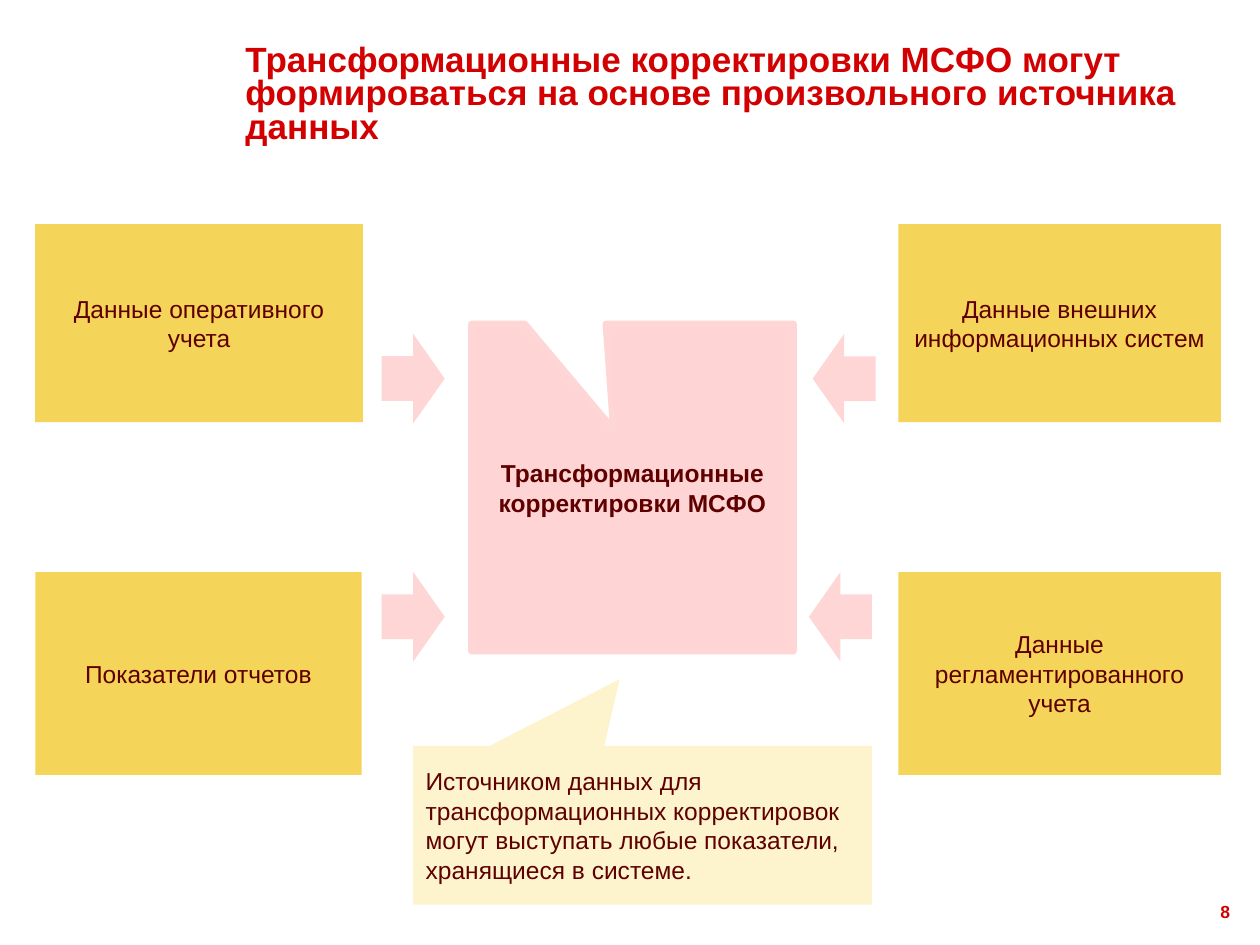
from dataclasses import dataclass

from pptx import Presentation
from pptx.dml.color import RGBColor
from pptx.enum.shapes import MSO_SHAPE
from pptx.enum.text import MSO_ANCHOR, PP_ALIGN
from pptx.shapes.autoshape import Shape
from pptx.slide import Slide
from pptx.util import Emu, Pt

EMU_PER_PX = 9144


@dataclass(frozen=True)
class Theme:
    font: str = "Arial"
    accent: str = "D20000"
    ink: str = "5F0000"
    source: str = "F4D459"
    note: str = "FDF4CD"
    center: str = "FFD4D4"
    arrow: str = "FFD6D6"
    title_size: int = 20
    body_size: int = 14
    number_size: int = 10
    outline: float = 3.5


@dataclass(frozen=True)
class Area:
    left: int
    top: int
    width: int
    height: int

    def lengths(self) -> tuple[Emu, ...]:
        return tuple(Emu(value * EMU_PER_PX) for value in
                     (self.left, self.top, self.width, self.height))


@dataclass(frozen=True)
class Label:
    text: str
    size: int
    color: str
    bold: bool = False
    align: PP_ALIGN = PP_ALIGN.CENTER
    anchor: MSO_ANCHOR = MSO_ANCHOR.MIDDLE
    line_spacing: float = 1.0


@dataclass(frozen=True)
class Block:
    area: Area
    kind: MSO_SHAPE
    fill: str
    label: Label | None = None
    adjustments: tuple[float, ...] = ()
    outline: str | None = None
    rotation: int = 0


THEME = Theme()


def write_label(box: Shape, label: Label) -> None:
    frame = box.text_frame
    frame.word_wrap = True
    frame.vertical_anchor = label.anchor
    para = frame.paragraphs[0]
    para.alignment = label.align
    para.line_spacing = label.line_spacing
    span = para.add_run()
    span.text = label.text
    span.font.name = THEME.font
    span.font.size = Pt(label.size)
    span.font.bold = label.bold
    span.font.color.rgb = RGBColor.from_string(label.color)


def draw_text(page: Slide, area: Area, label: Label) -> None:
    write_label(page.shapes.add_textbox(*area.lengths()), label)


def draw_block(page: Slide, block: Block) -> None:
    shape = page.shapes.add_shape(block.kind, *block.area.lengths())
    shape.shadow.inherit = False
    shape.rotation = block.rotation
    for index, value in enumerate(block.adjustments):
        shape.adjustments[index] = value
    shape.fill.solid()
    shape.fill.fore_color.rgb = RGBColor.from_string(block.fill)
    if block.outline:
        shape.line.color.rgb = RGBColor.from_string(block.outline)
        shape.line.width = Pt(THEME.outline)
    else:
        shape.line.fill.background()
    if block.label:
        write_label(shape, block.label)


def source_block(area: Area, text: str) -> Block:
    return Block(area, MSO_SHAPE.SNIP_2_DIAG_RECTANGLE, THEME.source,
                 Label(text, THEME.body_size, THEME.ink), (0, 0))


def arrow_block(left: int, top: int, rotation: int) -> Block:
    return Block(Area(left, top, 50, 71), MSO_SHAPE.RIGHT_ARROW,
                 THEME.arrow, rotation=rotation)


TITLE = Label(
    "Трансформационные корректировки МСФО могут формироваться на основе "
    "произвольного источника данных",
    THEME.title_size, THEME.accent, bold=True, align=PP_ALIGN.LEFT,
    line_spacing=0.8)
PAGE_NUMBER = Label("8", THEME.number_size, THEME.accent, bold=True,
                    align=PP_ALIGN.RIGHT, anchor=MSO_ANCHOR.TOP)
NOTE = Label(
    "Источником данных для трансформационных корректировок могут выступать "
    "любые показатели, хранящиеся в системе.",
    THEME.body_size, THEME.ink, align=PP_ALIGN.LEFT)
CENTER = Label("Трансформационные корректировки МСФО",
               THEME.body_size, THEME.ink, bold=True)

BLOCKS = (
    source_block(Area(28, 178, 260, 157), "Данные оперативного учета"),
    Block(Area(328, 592, 364, 126), MSO_SHAPE.RECTANGULAR_CALLOUT,
          THEME.note, NOTE, (-0.05, -0.92)),
    Block(Area(374, 257, 256, 260), MSO_SHAPE.RECTANGULAR_CALLOUT,
          THEME.center, CENTER, (-0.06, -0.18), outline=THEME.arrow),
    source_block(Area(713, 178, 256, 157),
                 "Данные внешних информационных систем"),
    source_block(Area(713, 454, 256, 161),
                 "Данные регламентированного учета"),
    source_block(Area(28, 454, 259, 161), "Показатели отчетов"),
    arrow_block(303, 454, 0),
    arrow_block(303, 265, 0),
    arrow_block(642, 454, 180),
    arrow_block(645, 265, 180),
)


def main() -> None:
    deck = Presentation()
    deck.slide_width = Emu(1000 * EMU_PER_PX)
    deck.slide_height = Emu(750 * EMU_PER_PX)
    page = deck.slides.add_slide(deck.slide_layouts[6])
    draw_text(page, Area(185, 17, 783, 118), TITLE)
    draw_text(page, Area(902, 710, 84, 28), PAGE_NUMBER)
    for block in BLOCKS:
        draw_block(page, block)
    deck.save("out.pptx")


if __name__ == "__main__":
    main()
